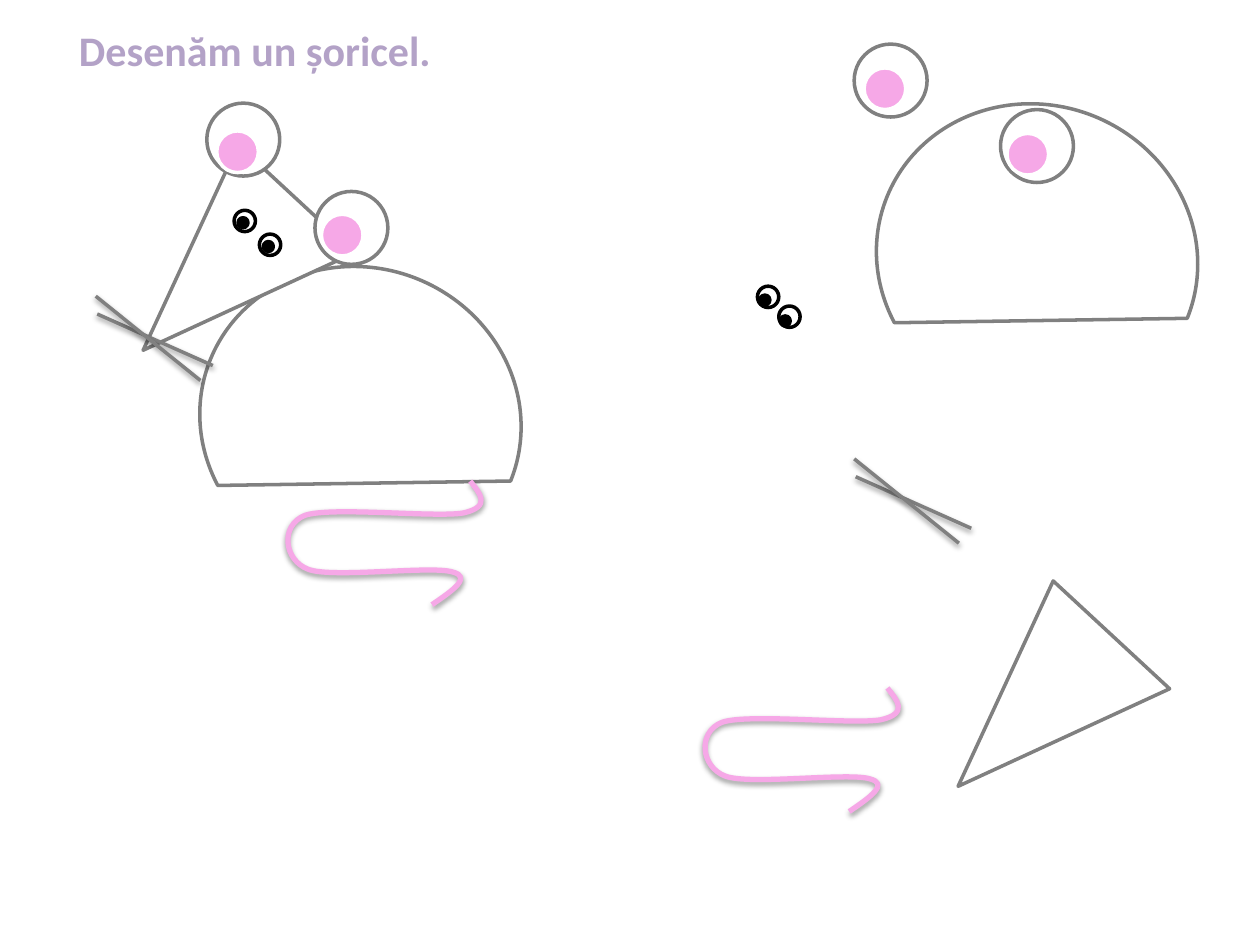
import pptx
import pptx.dml.color
import pptx.enum.shapes
import pptx.enum.text
import pptx.oxml
import pptx.oxml.ns
import pptx.util
from lxml import etree

Cm = pptx.util.Cm
SHAPES = pptx.enum.shapes.MSO_SHAPE
GREY, PINK, WHITE, BLACK, LILAC = "808080", "F6A8E7", "FFFFFF", "000000", "B3A2C7"

EAR, INNER_EAR, EYE, PUPIL = 1.47, 0.84, 0.43, 0.2

# Start point, then three points for each curve, from the tail's top left corner
TAIL = [(3.84, 0),
        (4.04, 0.25), (4.27, 0.51), (3.71, 0.64),
        (3.15, 0.74), (1.04, 0.51), (0.51, 0.69),
        (0, 0.89), (0.08, 1.6), (0.58, 1.78),
        (1.07, 1.96), (3.05, 1.7), (3.48, 1.83),
        (3.89, 1.93), (3.48, 2.21), (3.07, 2.49)]
WHISKERS = [(0.03, 0.36, 2.36, 1.4), (0, 0, 2.11, 1.7)]

# Ears and eyes: left, top, then the offset of the inner circle
ASSEMBLED = {
    "body": (4.19, 5.21), "head": (2.9, 3.43),
    "tail": (5.64, 9.7), "whiskers": (1.93, 5.97),
    "ears": [(4.17, 2.08, 0.2, 0.56), (6.35, 3.86, 0.13, 0.46)],
    "eyes": [(4.72, 4.24, 0.08, 0.15), (5.23, 4.72, 0.08, 0.15)],
}
SEPARATE = {
    "body": (17.83, 1.93), "head": (19.33, 12.22),
    "tail": (14.05, 13.87), "whiskers": (17.22, 9.25),
    "ears": [(17.22, 0.89, 0.2, 0.48), (20.17, 2.21, 0.13, 0.48)],
    "eyes": [(15.27, 5.77, 0.05, 0.18), (15.7, 6.17, 0.03, 0.2)],
}


def color(hex_value):
    return pptx.dml.color.RGBColor.from_string(hex_value)


def set_line(shape, line, width=2):
    shape.line.color.rgb = color(line)
    shape.line.width = pptx.util.Pt(width)


def add_shadow(shape):
    shape._element.spPr.append(pptx.oxml.parse_xml(
        f'<a:effectLst {pptx.oxml.ns.nsdecls("a")}>'
        '<a:outerShdw blurRad="40000" dist="20000" dir="5400000" rotWithShape="0">'
        '<a:srgbClr val="000000"><a:alpha val="38000"/></a:srgbClr>'
        '</a:outerShdw></a:effectLst>'))


def add_part(slide, kind, left, top, width, height, fill=WHITE, line=GREY,
             rotation=0, adjustments=()):
    shape = slide.shapes.add_shape(kind, Cm(left), Cm(top), Cm(width), Cm(height))
    shape.shadow.inherit = False
    shape.rotation = rotation
    shape.fill.solid()
    shape.fill.fore_color.rgb = color(fill)
    set_line(shape, line)
    for index, value in enumerate(adjustments):
        shape.adjustments[index] = value


def add_circle(slide, left, top, size, fill, line):
    add_part(slide, SHAPES.OVAL, left, top, size, size, fill, line)


def add_whiskers(slide, left, top):
    for x1, y1, x2, y2 in WHISKERS:
        whisker = slide.shapes.add_connector(
            pptx.enum.shapes.MSO_CONNECTOR.STRAIGHT,
            Cm(left + x1), Cm(top + y1), Cm(left + x2), Cm(top + y2))
        set_line(whisker, GREY)
        add_shadow(whisker)


def add_tail(slide, left, top):
    points = [(Cm(left + x), Cm(top + y)) for x, y in TAIL]
    builder = slide.shapes.build_freeform(*points[0])
    builder.add_line_segments(points[1:], close=False)
    tail = builder.convert_to_shape()
    tail.fill.background()
    set_line(tail, PINK, 3)
    # Turn every three straight segments into one cubic curve
    qn = pptx.oxml.ns.qn
    outline = tail._element.find(".//" + qn("a:path"))
    segments = outline.findall(qn("a:lnTo"))
    for start in range(0, len(segments), 3):
        curve = etree.SubElement(outline, qn("a:cubicBezTo"))
        for segment in segments[start:start + 3]:
            curve.append(segment[0])
            outline.remove(segment)
    add_shadow(tail)


def add_mouse(slide, places):
    # Chord adjustments: 0.6 per degree of the adjustment unit, here 43.5 and 270 degrees
    add_part(slide, SHAPES.CHORD, *places["body"], 6.15, 6.53, rotation=112,
             adjustments=(43.48 * 0.6, 270 * 0.6))
    add_part(slide, SHAPES.ISOSCELES_TRIANGLE, *places["head"], 3.2, 4.34,
             rotation=222.8, adjustments=(0.56,))
    add_tail(slide, *places["tail"])
    add_whiskers(slide, *places["whiskers"])
    for left, top, dx, dy in places["ears"]:
        add_circle(slide, left, top, EAR, WHITE, GREY)
        add_circle(slide, left + dx, top + dy, INNER_EAR, PINK, WHITE)
    for left, top, dx, dy in places["eyes"]:
        add_circle(slide, left, top, EYE, WHITE, BLACK)
        add_circle(slide, left + dx, top + dy, PUPIL, BLACK, BLACK)


def add_title(slide, text):
    box = slide.shapes.add_textbox(Cm(1.3), Cm(0.36), Cm(7.87), Cm(1.27))
    box.text_frame.word_wrap = False
    box.text_frame.auto_size = pptx.enum.text.MSO_AUTO_SIZE.SHAPE_TO_FIT_TEXT
    paragraph = box.text_frame.paragraphs[0]
    paragraph.text = text
    paragraph.alignment = pptx.enum.text.PP_ALIGN.CENTER
    font = paragraph.runs[0].font
    font.name = "Calibri"
    font.size = pptx.util.Pt(24)
    font.bold = True
    font.color.rgb = color(LILAC)


def main():
    presentation = pptx.Presentation()
    presentation.slide_width = Cm(25.4)
    presentation.slide_height = Cm(19.05)
    slide = presentation.slides.add_slide(presentation.slide_layouts[6])

    # Loose pieces on the right, finished mouse on the left
    add_mouse(slide, SEPARATE)
    add_mouse(slide, ASSEMBLED)
    add_title(slide, "Desenăm un șoricel. ")

    presentation.save("out.pptx")


if __name__ == "__main__":
    main()
